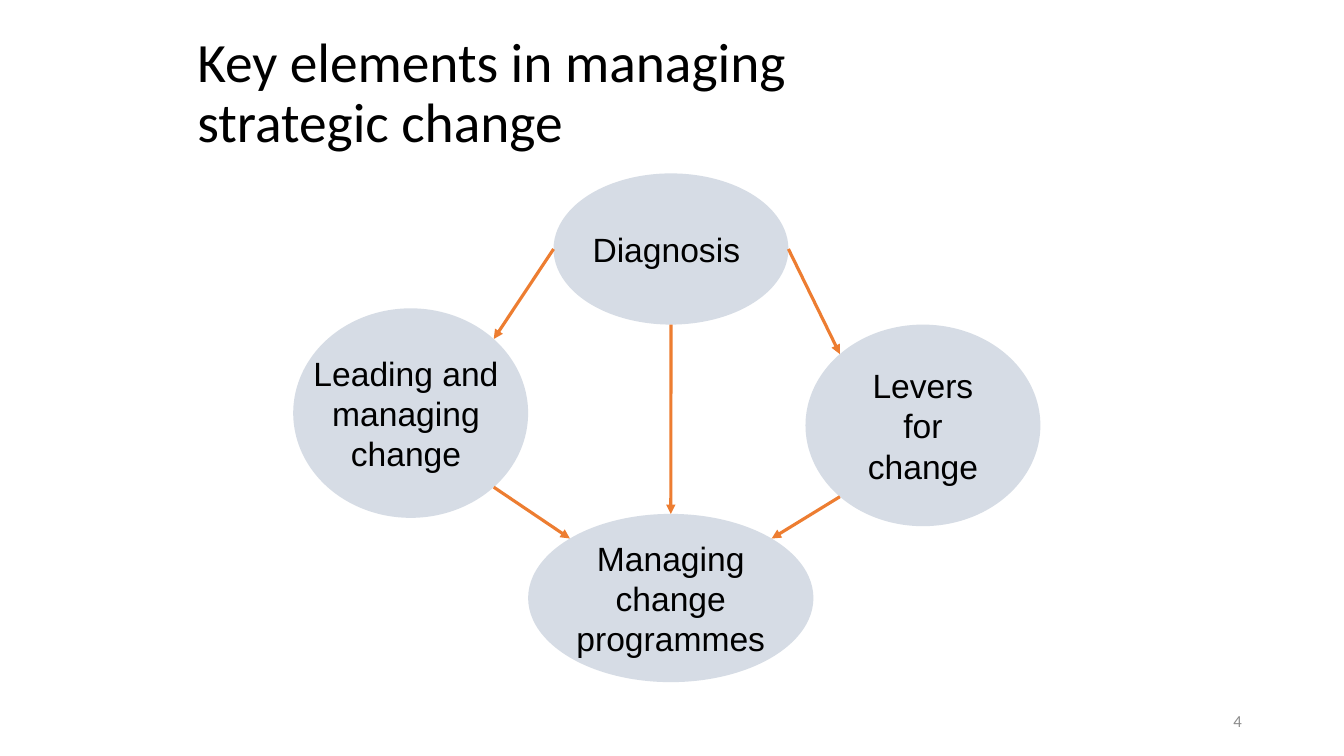
from copy import deepcopy
from dataclasses import dataclass
from math import sqrt

from lxml import etree
from pptx import Presentation
from pptx import util as u
from pptx.dml.color import RGBColor
from pptx.enum import shapes, text
from pptx.oxml import ns

HUES = {"ink": "000000", "oval": "D6DCE5", "arrow": "ED7D31", "number": "8C8C8C"}
DIAG = 1 / sqrt(2)
SIDES = {
    "left": (-1, 0), "right": (1, 0), "top": (0, -1), "bottom": (0, 1),
    "top left": (-DIAG, -DIAG), "top right": (DIAG, -DIAG),
    "bottom left": (-DIAG, DIAG), "bottom right": (DIAG, DIAG),
}


@dataclass
class Oval:
    label: str
    left: float
    top: float
    width: float
    height: float

    def point(self, side: str) -> tuple:
        across, down = SIDES[side]
        return (u.Cm(self.left + self.width * (1 + across) / 2),
                u.Cm(self.top + self.height * (1 + down) / 2))


@dataclass
class Arrow:
    start: Oval
    exit: str
    end: Oval
    entry: str


def color(name: str) -> RGBColor:
    return RGBColor.from_string(HUES[name])


def write(frame, words: str, *, size: float, font: str = "Arial", hue: str = "ink",
          align=text.PP_ALIGN.CENTER, wrap: bool = True, spacing: float = 1.0) -> None:
    frame.text = words
    frame.word_wrap = wrap
    frame.vertical_anchor = text.MSO_ANCHOR.MIDDLE
    for para in frame.paragraphs:
        para.alignment = align
        para.line_spacing = spacing
        for run in para.runs:
            run.font.size = u.Pt(size)
            run.font.name = font
            run.font.color.rgb = color(hue)
        for gap in para._p.findall(ns.qn("a:br")):
            gap.append(deepcopy(para.runs[0]._r.rPr))


def draw_oval(slide, oval: Oval) -> None:
    shape = slide.shapes.add_shape(
        shapes.MSO_SHAPE.OVAL,
        *map(u.Cm, (oval.left, oval.top, oval.width, oval.height)))
    shape.shadow.inherit = False
    shape.fill.solid()
    shape.fill.fore_color.rgb = color("oval")
    shape.line.fill.background()
    write(shape.text_frame, oval.label, size=24, wrap=False)


def draw_arrow(slide, arrow: Arrow) -> None:
    line = slide.shapes.add_connector(
        shapes.MSO_CONNECTOR.STRAIGHT,
        *arrow.start.point(arrow.exit), *arrow.end.point(arrow.entry))
    line.line.width = u.Pt(2.25)
    line.line.color.rgb = color("arrow")
    etree.SubElement(line.line._get_or_add_ln(), ns.qn("a:tailEnd"), type="triangle")
    etree.SubElement(line._element.spPr, ns.qn("a:effectLst"))


def main() -> None:
    deck = Presentation()
    deck.slide_width, deck.slide_height = u.Cm(33.87), u.Cm(19.05)
    slide = deck.slides.add_slide(deck.slide_layouts[5])

    title = slide.shapes.title
    title.left, title.top, title.width, title.height = map(u.Cm, (4.72, 0.74, 24.38, 3.3))
    write(title.text_frame, "Key elements in managing\vstrategic change", size=39.6,
          font="Calibri", align=text.PP_ALIGN.LEFT, spacing=0.9)

    start = Oval("Diagnosis ", 13.95, 4.37, 5.92, 3.81)
    lead = Oval("Leading and \nmanaging \nchange ", 7.39, 7.77, 5.92, 5.28)
    lever = Oval("Levers\nfor\nchange", 20.3, 8.18, 5.92, 5.08)
    manage = Oval("Managing\nchange\nprogrammes", 13.31, 12.95, 7.19, 4.24)
    for oval in (start, lead, lever, manage):
        draw_oval(slide, oval)

    for arrow in (
        Arrow(start, "left", lead, "top right"),
        Arrow(start, "right", lever, "top left"),
        Arrow(lead, "bottom right", manage, "top left"),
        Arrow(lever, "bottom left", manage, "top right"),
        Arrow(start, "bottom", manage, "top"),
    ):
        draw_arrow(slide, arrow)

    number = slide.shapes.add_textbox(*map(u.Cm, (23.93, 17.65, 7.62, 1.02)))
    write(number.text_frame, "4", size=12, font="Calibri", hue="number",
          align=text.PP_ALIGN.RIGHT)

    deck.save("out.pptx")


if __name__ == "__main__":
    main()
